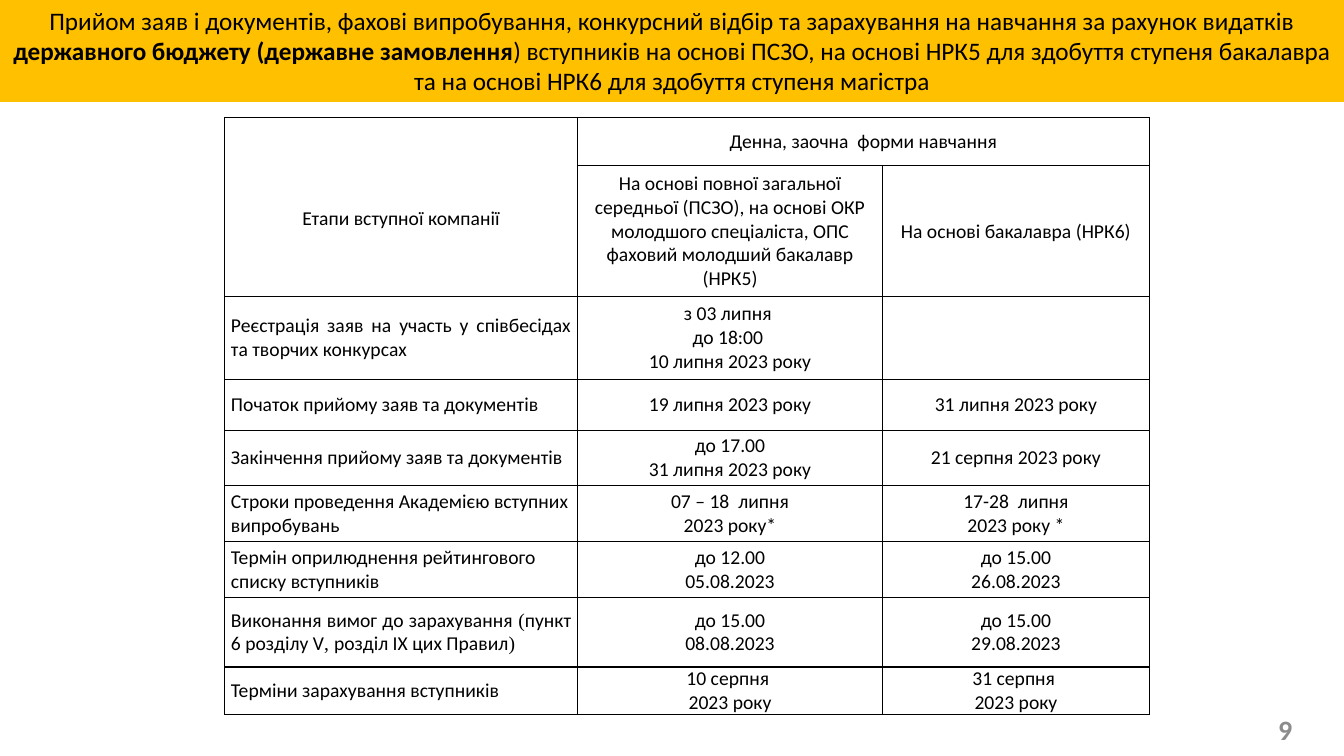
from lxml import etree
from pptx import Presentation
from pptx import util as u
from pptx.dml import color
from pptx.enum import shapes, text
from pptx.oxml import ns

Pt = u.Pt
COLORS = {"banner": "FFC000", "ink": "000000", "number": "8C8C8C"}
BODY, SERIF = "Calibri", "Times New Roman"
LEFT, CENTER, JUSTIFY = text.PP_ALIGN.LEFT, text.PP_ALIGN.CENTER, text.PP_ALIGN.JUSTIFY
COLUMN_WIDTHS = [252, 218, 190.5]
ROW_HEIGHTS = [34.5, 93.5, 59, 36.5, 39.5, 40, 40, 49.5, 34]

TITLE = [
    ("Прийом заяв і документів, фахові випробування, конкурсний відбір та "
     "зарахування на навчання за рахунок видатків ", False),
    ("державного бюджету (державне замовлення", True),
    (") вступників на основі ПСЗО, на основі НРК5 для здобуття ступеня бакалавра "
     "та на основі НРК6 для здобуття ступеня магістра", False),
]
ENROLMENT_RULES = [
    ("Виконання вимог до зарахування ", BODY), ("(", SERIF),
    ("пункт 6 розділу V", BODY), (", ", SERIF),
    ("розділ ІХ цих Правил", BODY), (")", SERIF),
]
SCHOOL_BASIS = ("На основі повної загальної середньої (ПСЗО), на основі ОКР молодшого "
                "спеціаліста, ОПС фаховий молодший бакалавр (НРК5)")
STAGES = [
    ("Реєстрація заяв на участь у співбесідах та творчих конкурсах", JUSTIFY,
     ["з 03 липня ", "до 18:00 ", "10 липня 2023 року"], []),
    ("Початок прийому заяв та документів", LEFT,
     ["19 липня 2023 року"], ["31 липня 2023 року"]),
    ("Закінчення прийому заяв та документів", LEFT,
     ["до 17.00", "31 липня 2023 року"], ["21 серпня 2023 року"]),
    ("Строки проведення Академією вступних випробувань", LEFT,
     ["07 – 18  липня", "2023 року*"], ["17-28  липня", "2023 року *"]),
    ("Термін оприлюднення рейтингового списку вступників", LEFT,
     ["до 12.00", "05.08.2023"], ["до 15.00", "26.08.2023"]),
    (ENROLMENT_RULES, JUSTIFY,
     ["до 15.00", "08.08.2023"], ["до 15.00", "29.08.2023"]),
    ("Терміни зарахування вступників", LEFT,
     ["10 серпня ", "2023 року"], ["31 серпня ", "2023 року"]),
]


def rgb(name):
    return color.RGBColor.from_string(COLORS[name])


def add_run(paragraph, words, size, font=BODY, bold=False, ink="ink"):
    run = paragraph.add_run()
    run.text = words
    run.font.name = font
    run.font.size = Pt(size)
    run.font.bold = bold
    run.font.color.rgb = rgb(ink)


def add_banner(slide, width):
    banner = slide.shapes.add_shape(shapes.MSO_SHAPE.RECTANGLE, 0, 0, width, Pt(72.7))
    banner.shadow.inherit = False
    banner.fill.solid()
    banner.fill.fore_color.rgb = rgb("banner")
    banner.line.fill.background()
    frame = banner.text_frame
    frame.word_wrap = True
    frame.vertical_anchor = text.MSO_ANCHOR.TOP
    frame.paragraphs[0].alignment = CENTER
    for words, bold in TITLE:
        add_run(frame.paragraphs[0], words, 18, bold=bold)


def add_page_number(slide, number):
    box = slide.shapes.add_textbox(Pt(905.8), Pt(502.5), Pt(54), Pt(37.5))
    frame = box.text_frame
    frame.word_wrap = True
    frame.vertical_anchor = text.MSO_ANCHOR.MIDDLE
    add_run(frame.paragraphs[0], number, 20, bold=True, ink="number")


def style_cell(cell):
    cell.margin_left = cell.margin_right = Pt(4.5)
    cell.margin_top = cell.margin_bottom = 0
    cell.vertical_anchor = text.MSO_ANCHOR.MIDDLE
    properties = cell._tc.get_or_add_tcPr()
    for side in ("a:lnL", "a:lnR", "a:lnT", "a:lnB"):
        border = etree.SubElement(properties, ns.qn(side), w=str(Pt(1)))
        fill = etree.SubElement(border, ns.qn("a:solidFill"))
        etree.SubElement(fill, ns.qn("a:srgbClr"), val=COLORS["ink"])
    cell.fill.background()


def write_cell(cell, lines, alignment=CENTER):
    frame = cell.text_frame
    for index, line in enumerate(lines):
        paragraph = frame.add_paragraph() if index else frame.paragraphs[0]
        paragraph.alignment = alignment
        for words, font in [(line, BODY)] if isinstance(line, str) else line:
            add_run(paragraph, words, 14, font)


def add_schedule(slide):
    schedule = slide.shapes.add_table(
        len(ROW_HEIGHTS), len(COLUMN_WIDTHS), Pt(160.5), Pt(84),
        Pt(sum(COLUMN_WIDTHS)), Pt(sum(ROW_HEIGHTS))).table
    schedule.first_row = schedule.horz_banding = False
    for column, width in zip(schedule.columns, COLUMN_WIDTHS):
        column.width = Pt(width)
    for row, height in zip(schedule.rows, ROW_HEIGHTS):
        row.height = Pt(height)
        for cell in row.cells:
            style_cell(cell)

    stage_header = schedule.cell(0, 0)
    stage_header.merge(schedule.cell(1, 0))
    stage_header.margin_top = Pt(17)
    write_cell(stage_header, ["Етапи вступної компанії"])
    study_forms = schedule.cell(0, 1)
    study_forms.merge(schedule.cell(0, 2))
    write_cell(study_forms, ["Денна, заочна  форми навчання"])
    write_cell(schedule.cell(1, 1), [SCHOOL_BASIS])
    write_cell(schedule.cell(1, 2), ["На основі бакалавра (НРК6)"])

    for row, (stage, alignment, school_dates, bachelor_dates) in enumerate(STAGES, 2):
        write_cell(schedule.cell(row, 0), [stage], alignment)
        write_cell(schedule.cell(row, 1), school_dates)
        write_cell(schedule.cell(row, 2), bachelor_dates)


def main():
    deck = Presentation()
    deck.slide_width, deck.slide_height = Pt(960), Pt(540)
    slide = deck.slides.add_slide(deck.slide_layouts[6])
    add_page_number(slide, "9")
    add_banner(slide, deck.slide_width)
    add_schedule(slide)
    deck.save("out.pptx")


if __name__ == "__main__":
    main()
